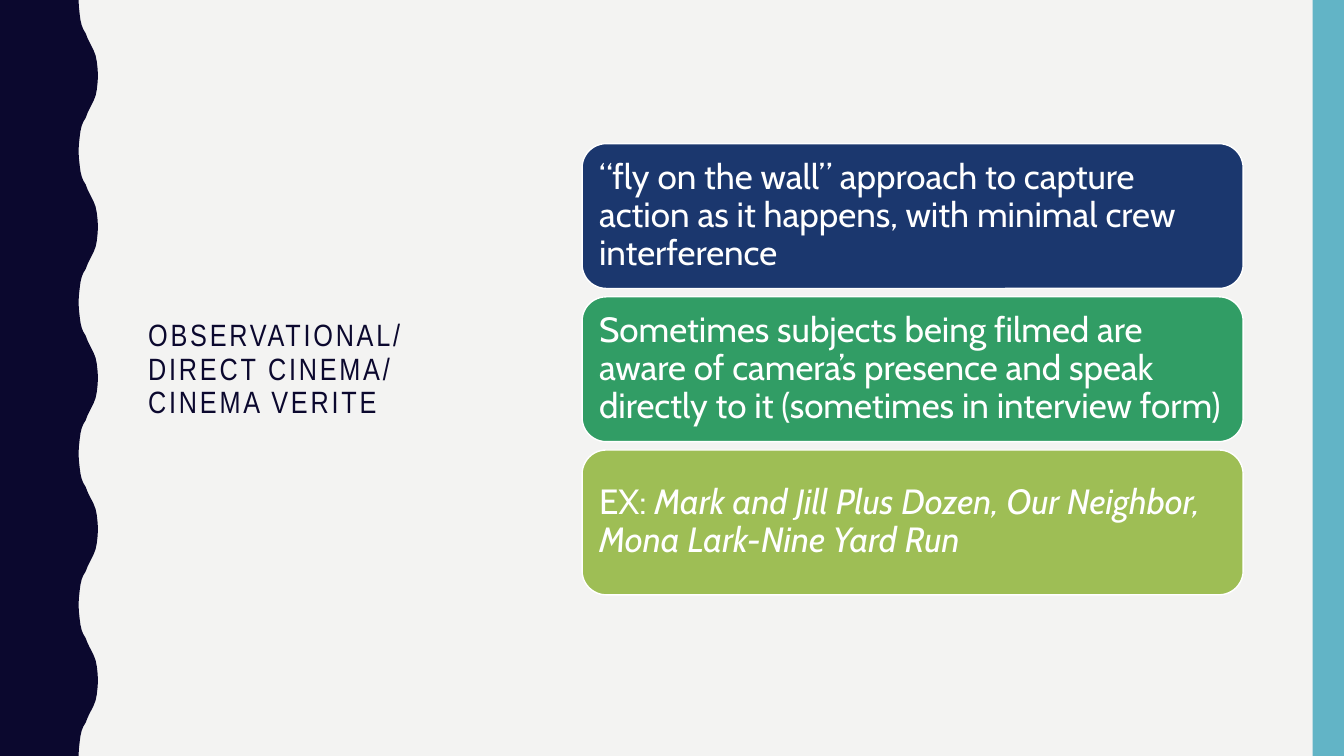
from dataclasses import dataclass

import pptx
import pptx.dml.color
import pptx.enum.shapes
import pptx.enum.text
import pptx.util
from pptx.util import Cm

SLIDE_WIDTH, SLIDE_HEIGHT = 33.87, 19.05
NAVY, TEAL, WHITE, PAPER = "0B082E", "62B4C6", "FFFFFF", "F3F3F2"

# Half of one wave: (x, y) from trough to crest, in centimetres
WAVE_PERIOD = 3.81
WAVE_COUNT = 5
HALF_WAVE = [
    (1.98, 0), (1.99, 0.18), (2.01, 0.36), (2.03, 0.51), (2.06, 0.64),
    (2.1, 0.74), (2.16, 0.84), (2.21, 0.97), (2.26, 1.07), (2.31, 1.17),
    (2.36, 1.27), (2.41, 1.4), (2.44, 1.55), (2.46, 1.73), (2.47, 1.9),
]

CARD_LEFT, CARD_TOP = 14.67, 3.62
CARD_WIDTH, CARD_HEIGHT = 16.66, 3.65
CARD_PITCH = 3.86
CARD_INSET = 0.25


@dataclass
class Card:
    colour: str
    text: str
    italic_text: str = ""


CARDS = [
    Card("1B376E", "“fly on the wall” approach to capture action as it happens, "
                   "with minimal crew interference"),
    Card("319D65", "Sometimes subjects being filmed are aware of camera’s presence "
                   "and speak directly to it (sometimes in interview form)"),
    Card("9EBE55", "EX: ", "Mark and Jill Plus Dozen, Our Neighbor, Mona Lark-Nine Yard Run"),
]


def set_fill(fill, colour: str) -> None:
    fill.solid()
    fill.fore_color.rgb = pptx.dml.color.RGBColor.from_string(colour)


def format_paragraph(paragraph, font_name: str, size: float, colour: str) -> None:
    paragraph.alignment = pptx.enum.text.PP_ALIGN.LEFT
    paragraph.line_spacing = 0.9
    paragraph.font.name = font_name
    paragraph.font.size = pptx.util.Pt(size)
    set_fill(paragraph.font.fill, colour)


def draw_wave(slide) -> None:
    points = []
    for wave in range(WAVE_COUNT):
        top = wave * WAVE_PERIOD
        points += [(x, top + y) for x, y in HALF_WAVE]
        points += [(x, top + WAVE_PERIOD - y) for x, y in reversed(HALF_WAVE)]
    points.append((0, SLIDE_HEIGHT))
    builder = slide.shapes.build_freeform(0, 0)
    builder.add_line_segments([(Cm(x), Cm(y)) for x, y in points])
    shape = builder.convert_to_shape()
    shape.shadow.inherit = False
    set_fill(shape.fill, NAVY)
    shape.line.fill.background()


def draw_side_bar(slide) -> None:
    width = 0.79
    shape = slide.shapes.add_shape(
        pptx.enum.shapes.MSO_SHAPE.RECTANGLE,
        Cm(SLIDE_WIDTH - width), 0, Cm(width), Cm(SLIDE_HEIGHT))
    shape.shadow.inherit = False
    set_fill(shape.fill, TEAL)
    shape.line.fill.background()


def write_title(slide, text: str) -> None:
    title = slide.shapes.title
    title.left, title.top, title.width, title.height = Cm(3.48), Cm(1.8), Cm(9.39), Cm(15.06)
    frame = title.text_frame
    frame.text = text
    frame.word_wrap = True
    frame.auto_size = pptx.enum.text.MSO_AUTO_SIZE.NONE
    frame.vertical_anchor = pptx.enum.text.MSO_ANCHOR.MIDDLE
    paragraph = frame.paragraphs[0]
    format_paragraph(paragraph, "Arial Narrow", 22, NAVY)
    # Letter spacing of 2 points
    paragraph.runs[0]._r.get_or_add_rPr().set("spc", "200")


def draw_card(slide, card: Card, top: float) -> None:
    shape = slide.shapes.add_shape(
        pptx.enum.shapes.MSO_SHAPE.ROUNDED_RECTANGLE,
        Cm(CARD_LEFT), Cm(top), Cm(CARD_WIDTH), Cm(CARD_HEIGHT))
    shape.shadow.inherit = False
    set_fill(shape.fill, card.colour)
    set_fill(shape.line.fill, WHITE)
    shape.line.width = pptx.util.Pt(1)
    frame = shape.text_frame
    frame.word_wrap = True
    frame.vertical_anchor = pptx.enum.text.MSO_ANCHOR.MIDDLE
    frame.margin_left = frame.margin_right = Cm(CARD_INSET)
    frame.margin_top = frame.margin_bottom = Cm(CARD_INSET)
    paragraph = frame.paragraphs[0]
    format_paragraph(paragraph, "Cabin", 25, WHITE)
    paragraph.add_run().text = card.text
    if card.italic_text:
        run = paragraph.add_run()
        run.text = card.italic_text
        run.font.italic = True


def main() -> None:
    presentation = pptx.Presentation()
    presentation.slide_width = Cm(SLIDE_WIDTH)
    presentation.slide_height = Cm(SLIDE_HEIGHT)
    slide = presentation.slides.add_slide(presentation.slide_layouts.get_by_name("Title Only"))
    set_fill(slide.background.fill, PAPER)

    # Side decorations
    draw_wave(slide)
    draw_side_bar(slide)

    # Title and stacked cards
    write_title(slide, "OBSERVATIONAL/DIRECT CINEMA/ CINEMA VERITE")
    for index, card in enumerate(CARDS):
        draw_card(slide, card, CARD_TOP + index * CARD_PITCH)

    presentation.save("out.pptx")


if __name__ == "__main__":
    main()
